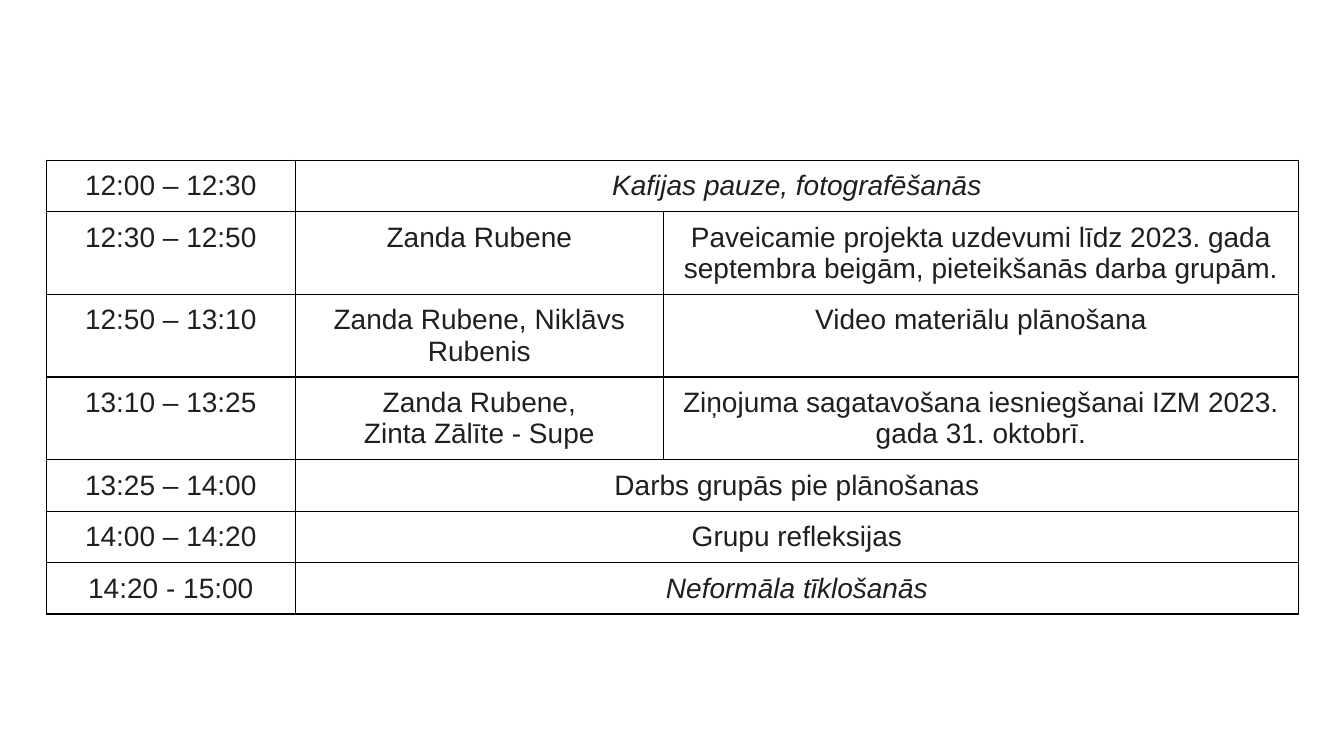
from dataclasses import dataclass

from lxml import etree
from pptx import Presentation
from pptx.dml.color import RGBColor
from pptx.enum.text import MSO_ANCHOR, PP_ALIGN
from pptx.oxml.ns import qn
from pptx.util import Inches, Pt

CENTER = PP_ALIGN.CENTER
TOP = MSO_ANCHOR.TOP
WIDE, HIGH = 13.33, 7.5
BLANK = 6


@dataclass(frozen=True)
class Theme:
    font: str = "Arial"
    size: int = 20
    ink: str = "201F1E"
    paper: str = "FFFFFF"
    line: str = "000000"
    weight: int = 1


THEME = Theme()
BOX = (0.46, 1.59, 12.42, 4.5)
COLS = (2.47, 3.65, 6.3)
LINES = (1, 2, 2, 2, 1, 1, 1)
PAD = 0.2
CELL = {
    "margin_left": Inches(0.07),
    "margin_right": Inches(0.07),
    "margin_top": Inches(PAD / 2),
    "margin_bottom": Inches(PAD / 2),
    "vertical_anchor": TOP,
}
PLAIN = {"name": THEME.font, "size": Pt(THEME.size), "italic": False}
SLANT = {**PLAIN, "italic": True}
AGENDA = (
    (PLAIN, "12:00 – 12:30", "Kafijas pauze, fotografēšanās"),
    (PLAIN, "12:30 – 12:50", "Zanda Rubene",
     "Paveicamie projekta uzdevumi līdz 2023. gada septembra beigām, pieteikšanās darba grupām."),
    (PLAIN, "12:50 – 13:10", "Zanda Rubene, Niklāvs Rubenis",
     "Video materiālu plānošana"),
    (PLAIN, "13:10 – 13:25", "Zanda Rubene,\nZinta Zālīte - Supe",
     "Ziņojuma sagatavošana iesniegšanai IZM 2023. gada 31. oktobrī."),
    (PLAIN, "13:25 – 14:00", "Darbs grupās pie plānošanas"),
    (PLAIN, "14:00 – 14:20", "Grupu refleksijas"),
    (PLAIN, "14:20 - 15:00", "Neformāla tīklošanās"),
)
BREAKS = {"Kafijas pauze, fotografēšanās", "Neformāla tīklošanās"}


def apply(item, values):
    for name, value in values.items():
        setattr(item, name, value)


def frame(cell):
    props = cell._tc.get_or_add_tcPr()
    for side in ("lnL", "lnR", "lnT", "lnB"):
        line = etree.SubElement(props, qn(f"a:{side}"), w=str(Pt(THEME.weight)))
        fill = etree.SubElement(line, qn("a:solidFill"))
        etree.SubElement(fill, qn("a:srgbClr"), val=THEME.line)
    cell.fill.solid()
    cell.fill.fore_color.rgb = RGBColor.from_string(THEME.paper)


def write(cell, text, style):
    cell.text = text
    for para in cell.text_frame.paragraphs:
        para.alignment = CENTER
        for run in para.runs:
            apply(run.font, style)
            run.font.color.rgb = RGBColor.from_string(THEME.ink)


def agenda(slide, box):
    left, top, width, height = box
    table = slide.shapes.add_table(
        len(AGENDA), len(COLS), *(Inches(side) for side in box)).table
    apply(table, {"first_row": False, "horz_banding": False})
    for column, share in zip(table.columns, COLS):
        column.width = Inches(width * share / sum(COLS))
    step = (height - PAD * len(LINES)) / sum(LINES)
    for index, (style, *texts) in enumerate(AGENDA):
        row = table.rows[index]
        row.height = Inches(PAD + step * LINES[index])
        for cell in row.cells:
            apply(cell, CELL)
            frame(cell)
        if len(texts) < len(COLS):
            row.cells[1].merge(row.cells[2])
        for cell, text in zip(row.cells, texts):
            write(cell, text, SLANT if text in BREAKS else style)


def main():
    deck = Presentation()
    apply(deck, {"slide_width": Inches(WIDE), "slide_height": Inches(HIGH)})
    slide = deck.slides.add_slide(deck.slide_layouts[BLANK])
    agenda(slide, BOX)
    deck.save("out.pptx")


if __name__ == "__main__":
    main()
